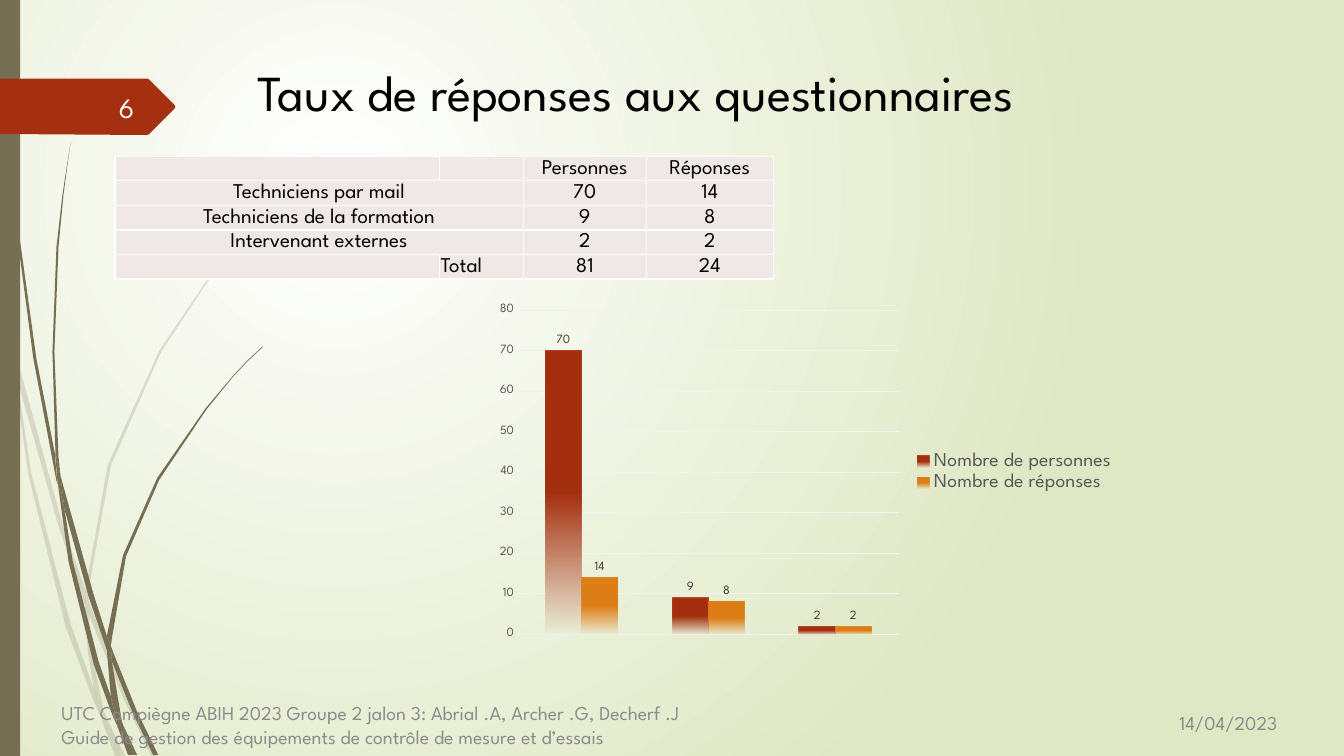
from dataclasses import dataclass
from typing import NamedTuple

from lxml.etree import SubElement
from pptx import Presentation
from pptx.chart.data import CategoryChartData
from pptx.dml.color import RGBColor
from pptx.enum.chart import XL_CHART_TYPE as ChartType, XL_LABEL_POSITION as LabelPosition
from pptx.enum.chart import XL_LEGEND_POSITION as LegendPosition, XL_TICK_MARK as TickMark
from pptx.enum.shapes import MSO_SHAPE as ShapeKind
from pptx.enum.text import MSO_ANCHOR as Anchor, MSO_AUTO_SIZE as AutoSize, PP_ALIGN as Align
from pptx.oxml import parse_xml
from pptx.oxml.ns import nsdecls, qn
from pptx.util import Inches, Pt


@dataclass(frozen=True)
class Theme:
    font: str = "League Spartan"
    black: str = "000000"
    white: str = "FFFFFF"
    page_number: str = "FEFFFF"
    footer: str = "8C8C8C"
    axis: str = "595959"
    data_label: str = "404040"
    grid: str = "F2F2F2"
    cell: str = "F0E8E7"
    olive: str = "766F54"
    red: str = "A53010"
    orange: str = "DE7E18"
    green: str = "DFE8C4"
    title_size: int = 36
    number_size: int = 20
    table_size: int = 15
    small_size: int = 14
    chart_size: int = 9


THEME = Theme()


class Outline(NamedTuple):
    """A closed polygon whose corners are in hundredths of an inch."""
    corners: list[tuple[int, int]]
    colour: str = THEME.olive
    opacity: int = 100


class Label(NamedTuple):
    lines: list[str]
    box: tuple[float, float, float, float]
    size: int
    colour: str = THEME.footer
    align: Align = Align.LEFT


class Stop(NamedTuple):
    position: int
    colour: str
    opacity: int = 100


PALE_WISPS = [
    [(11, 350), (9, 322), (0, 282), (0, 299), (10, 344)],
    [(58, 522), (84, 599), (85, 586), (62, 520), (14, 345), (17, 376)],
    [(92, 607), (88, 596), (88, 610), (123, 694), (150, 750), (155, 750), (127, 692)],
    [(119, 750), (124, 750), (105, 711)],
    [(93, 683), (70, 619), (31, 469), (17, 376), (11, 350), (28, 470), (65, 621),
     (92, 693), (101, 714), (99, 707)],
    [(84, 599), (87, 646), (93, 683), (96, 692), (105, 711), (103, 706), (91, 646),
     (88, 610), (88, 608)],
    [(88, 584), (110, 462), (160, 349), (229, 245), (268, 198), (290, 175), (312, 154),
     (312, 153), (289, 175), (268, 197), (228, 244), (158, 348), (107, 461), (85, 584),
     (85, 586), (88, 596)],
    [(101, 714), (114, 750), (119, 750)],
    [(88, 608), (88, 610), (88, 596), (85, 586), (84, 599)],
    [(96, 692), (93, 683), (99, 707), (101, 714), (119, 750), (105, 711)],
]
DARK_WISPS = [
    [(7, 110), (17, 233), (33, 355), (56, 477), (57, 481), (55, 457), (55, 453),
     (36, 355), (19, 232), (8, 109), (5, 48), (4, 0), (3, 0), (4, 48)],
    [(88, 592), (106, 645), (106, 633), (106, 631), (93, 590), (60, 472), (64, 505)],
    [(113, 649), (110, 641), (111, 656), (132, 708), (152, 749), (157, 749), (136, 706)],
    [(110, 691), (98, 657), (72, 556), (64, 505), (57, 477), (68, 557), (93, 659),
     (111, 708), (117, 722), (116, 717)],
    [(60, 472), (58, 453), (54, 349), (58, 245), (63, 193), (70, 141), (62, 193),
     (56, 245), (52, 349), (55, 449)],
    [(133, 749), (136, 749), (122, 719)],
    [(57, 477), (64, 505), (60, 472), (55, 449), (55, 453)],
    [(111, 633), (125, 552), (158, 476), (205, 406), (231, 374), (245, 359), (261, 344),
     (260, 344), (245, 358), (231, 373), (204, 405), (156, 474), (122, 551), (106, 631),
     (110, 641)],
    [(117, 722), (127, 749), (131, 749)],
    [(106, 645), (110, 691), (116, 706), (122, 719), (121, 716), (111, 656), (109, 651)],
    [(106, 645), (109, 651), (111, 656), (110, 641), (106, 631), (106, 633)],
    [(116, 706), (110, 691), (116, 717), (117, 722), (130, 749), (133, 749), (122, 719)],
]
NUMBER_ARROW = Outline([(0, 78), (146, 78), (148, 79), (173, 104), (174, 106), (173, 108),
                        (148, 133), (146, 134), (0, 133)], THEME.red)

LABELS = [
    Label(["6"], (0.58, 0.86, 0.85, 0.4), THEME.number_size, THEME.page_number, Align.RIGHT),
    Label(["14/04/2023"], (11.6, 6.93, 1.57, 0.47), THEME.small_size),
    Label(["UTC Compiègne ABIH 2023 Groupe 2 jalon 3: Abrial .A, Archer .G, Decherf .J",
           "Guide de gestion des équipements de contrôle de mesure et d’essais"],
          (0.51, 6.76, 10.49, 0.86), THEME.small_size),
]
TABLE_ROWS = [
    ["", "", "Personnes", "Réponses"],
    ["Techniciens par mail", "", "70", "14"],
    ["Techniciens de la formation", "", "9", "8"],
    ["Intervenant externes", "", "2", "2"],
    ["", "Total", "81", "24"],
]
COLUMN_WIDTHS = [3.22, 0.83, 1.22, 1.26]
CHART_SERIES = [("Nombre de personnes", (70, 9, 2), THEME.red),
                ("Nombre de réponses", (14, 8, 2), THEME.orange)]


def style_font(font, size: int, colour: str) -> None:
    font.name, font.size = THEME.font, Pt(size)
    font.color.rgb = RGBColor.from_string(colour)


def paint(fill, colour: str) -> None:
    fill.solid()
    fill.fore_color.rgb = RGBColor.from_string(colour)


def use_gradient(element, stops: list[Stop], direction: str) -> None:
    """Put a gradient in place of the first solid fill inside the element."""
    stop_list = "".join(
        f'<a:gs pos="{stop.position * 1000}"><a:srgbClr val="{stop.colour}">'
        f'<a:alpha val="{stop.opacity * 1000}"/></a:srgbClr></a:gs>' for stop in stops)
    solid = element.find(".//" + qn("a:solidFill"))
    solid.getparent().replace(solid, parse_xml(
        f'<a:gradFill {nsdecls("a")} rotWithShape="1"><a:gsLst>{stop_list}</a:gsLst>'
        f'{direction}</a:gradFill>'))


def add_background(slide) -> None:
    paint(slide.background.fill, THEME.green)
    use_gradient(slide._element, [Stop(0, THEME.white), Stop(100, THEME.green)],
                 '<a:path path="circle"><a:fillToRect l="50000" t="50000" '
                 'r="100000" b="100000"/></a:path>')


def finish_shape(shape, colour: str, opacity: int = 100) -> None:
    shape.shadow.inherit = False
    shape.line.fill.background()
    paint(shape.fill, colour)
    if opacity < 100:
        colour_element = shape._element.spPr.find(".//" + qn("a:srgbClr"))
        SubElement(colour_element, qn("a:alpha"), val=str(opacity * 1000))


def add_outline(slide, outline: Outline) -> None:
    start, *others = outline.corners
    builder = slide.shapes.build_freeform(*start, scale=float(Inches(0.01)))
    builder.add_line_segments(others, close=True)
    finish_shape(builder.convert_to_shape(), outline.colour, outline.opacity)


def add_label(slide, label: Label) -> None:
    frame = slide.shapes.add_textbox(*map(Inches, label.box)).text_frame
    frame.word_wrap, frame.vertical_anchor = True, Anchor.MIDDLE
    frame.text = "\n".join(label.lines)
    for paragraph in frame.paragraphs:
        paragraph.alignment = label.align
        style_font(paragraph.font, label.size, label.colour)


def set_title(slide) -> None:
    title = slide.shapes.title
    title.left, title.top, title.width, title.height = map(Inches, (2.45, 0.56, 9.75, 1.4))
    frame = title.text_frame
    frame.text = "Taux de réponses aux questionnaires"
    frame.auto_size, frame.vertical_anchor = AutoSize.NONE, Anchor.TOP
    frame.paragraphs[0].alignment = Align.LEFT
    style_font(frame.paragraphs[0].font, THEME.title_size, THEME.black)


def add_answer_chart(slide) -> None:
    data = CategoryChartData()
    data.categories = ["1", "2", "3"]
    for name, values, _ in CHART_SERIES:
        data.add_series(name, values)
    chart = slide.shapes.add_chart(ChartType.COLUMN_CLUSTERED,
                                   *map(Inches, (4.83, 2.95, 6.34, 3.47)), data).chart
    style_font(chart.font, THEME.chart_size, THEME.axis)
    chart.has_title = False
    chart.has_legend = True
    chart.legend.position, chart.legend.include_in_layout = LegendPosition.RIGHT, False
    style_font(chart.legend.font, THEME.small_size, THEME.axis)
    chart.category_axis.visible = False
    axis = chart.value_axis
    axis.minimum_scale, axis.maximum_scale, axis.major_unit = 0, 80, 10
    axis.major_tick_mark = TickMark.NONE
    axis.format.line.fill.background()
    style_font(axis.tick_labels.font, THEME.chart_size, THEME.axis)
    grid = axis.major_gridlines.format.line
    grid.width = Pt(0.75)
    paint(grid.fill, THEME.grid)
    plot = chart.plots[0]
    plot.gap_width, plot.overlap, plot.vary_by_categories = 150, 0, False
    for series, (_, _, colour) in zip(plot.series, CHART_SERIES):
        paint(series.format.fill, colour)
        use_gradient(series._element, [Stop(50, colour), Stop(100, colour, 0)],
                     '<a:lin ang="5400000" scaled="0"/>')
        labels = series.data_labels
        labels.show_value, labels.position = True, LabelPosition.OUTSIDE_END
        style_font(labels.font, THEME.chart_size, THEME.data_label)


def format_cell(cell, text: str) -> None:
    cell.margin_left = cell.margin_right = cell.margin_top = Inches(0.01)
    cell.margin_bottom = 0
    cell.vertical_anchor = Anchor.MIDDLE
    cell.text = text
    paragraph = cell.text_frame.paragraphs[0]
    paragraph.alignment = Align.LEFT if text == "Total" else Align.CENTER
    style_font(paragraph.font, THEME.table_size, THEME.black)
    paint(cell.fill, THEME.cell)
    for index, side in enumerate("LRTB"):
        cell._tc.tcPr.insert(index, parse_xml(
            f'<a:ln{side} {nsdecls("a")} w="{Pt(1)}"><a:solidFill>'
            f'<a:srgbClr val="{THEME.white}"/></a:solidFill></a:ln{side}>'))


def add_answer_table(slide) -> None:
    table = slide.shapes.add_table(len(TABLE_ROWS), len(COLUMN_WIDTHS),
                                   *map(Inches, (1.14, 1.55, 6.54, 1.22))).table
    for column, width in zip(table.columns, COLUMN_WIDTHS):
        column.width = Inches(width)
    for row_index, texts in enumerate(TABLE_ROWS):
        for column_index, text in enumerate(texts):
            format_cell(table.cell(row_index, column_index), text)
        if texts[0]:
            table.cell(row_index, 0).merge(table.cell(row_index, 1))


def main() -> None:
    presentation = Presentation()
    presentation.slide_width, presentation.slide_height = Inches(13.33), Inches(7.5)
    slide = presentation.slides.add_slide(presentation.slide_layouts[5])
    add_background(slide)
    for corners in PALE_WISPS:
        add_outline(slide, Outline(corners, opacity=20))
    for corners in DARK_WISPS:
        add_outline(slide, Outline(corners))
    side_bar = slide.shapes.add_shape(ShapeKind.RECTANGLE, 0, 0, Inches(0.2), Inches(7.5))
    finish_shape(side_bar, THEME.olive)
    add_outline(slide, NUMBER_ARROW)
    set_title(slide)
    add_answer_chart(slide)
    add_answer_table(slide)
    for label in LABELS:
        add_label(slide, label)
    presentation.save("out.pptx")


if __name__ == "__main__":
    main()
